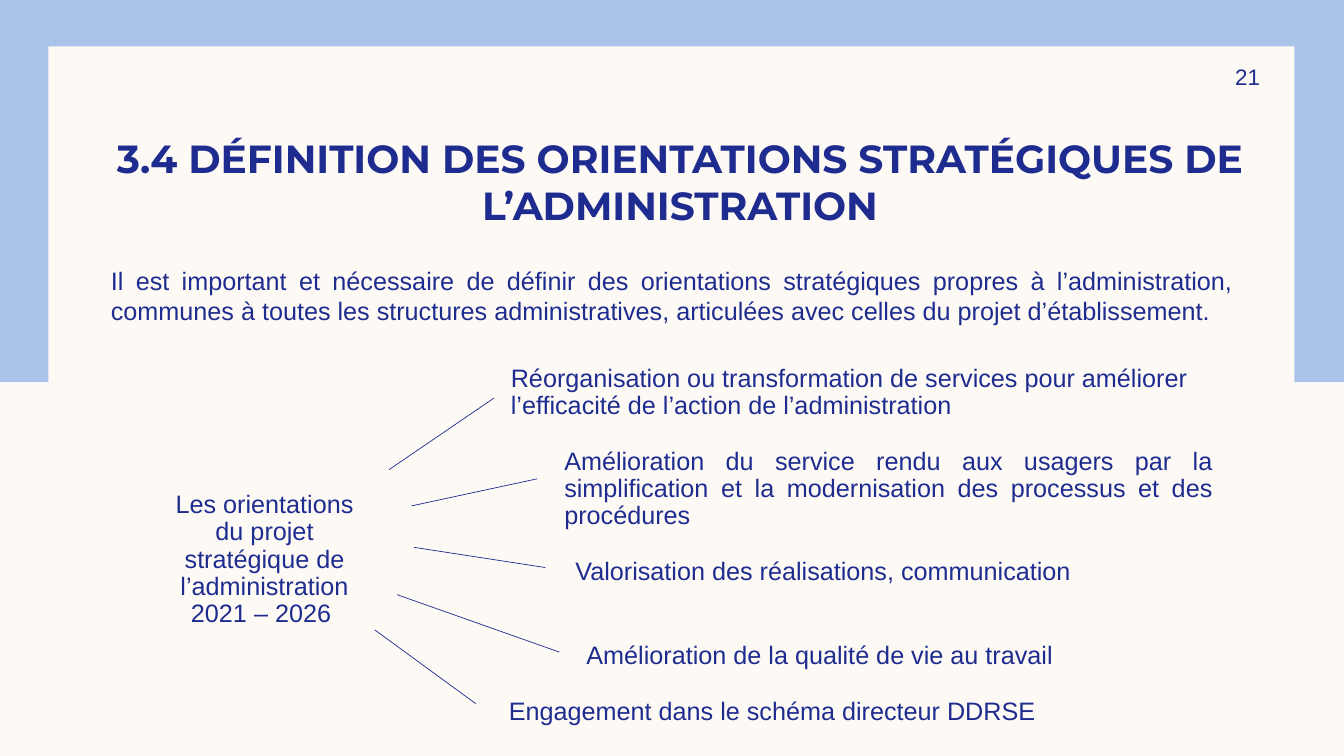
"""Build the slide on the strategic directions of the administration."""
import pptx
import pptx.util
import pptx.dml.color
import pptx.enum.shapes
import pptx.enum.text
import lxml.etree

Pt = pptx.util.Pt
Align = pptx.enum.text.PP_ALIGN
Anchor = pptx.enum.text.MSO_ANCHOR
Rgb = pptx.dml.color.RGBColor.from_string
Theme = {
    "ink": Rgb("1F2C8F"), "blue": Rgb("AAC3E8"), "cream": Rgb("FDFAF6"),
    "head": "Montserrat", "text": "Arial",
    "title": 28, "body": 18, "page": 16,
}

deck = pptx.Presentation()
deck.slide_width, deck.slide_height = Pt(960), Pt(540)
slide = deck.slides.add_slide(deck.slide_layouts[1])
shapes = slide.shapes
slide.background.fill.solid()
slide.background.fill.fore_color.rgb = Theme["cream"]


def write(text, box, holder=None, size="body", font="text", bold=False, align=Align.LEFT,
          anchor=Anchor.TOP, inset=(7.2, 3.6, 7.2, 3.6), line=1, before=0):
    """Put formatted text in a placeholder or a new text box."""
    item = holder or shapes.add_textbox(0, 0, 0, 0)
    item.left, item.top, item.width, item.height = map(Pt, box)
    frame = item.text_frame
    frame.word_wrap = True
    frame.auto_size = pptx.enum.text.MSO_AUTO_SIZE.NONE
    frame.vertical_anchor = anchor
    (frame.margin_left, frame.margin_top,
     frame.margin_right, frame.margin_bottom) = map(Pt, inset)
    frame.text = text
    para = frame.paragraphs[0]
    para.alignment, para.line_spacing, para.space_before = align, line, Pt(before)
    face = para.runs[0].font
    face.name, face.size, face.bold = Theme[font], Pt(Theme[size]), bold
    face.color.rgb = Theme["ink"]
    return para


for box, tone in [((0, 0, 960, 272.9), "blue"), ((34.6, 33.1, 890, 474.5), "cream")]:
    panel = shapes.add_shape(pptx.enum.shapes.MSO_SHAPE.RECTANGLE, *map(Pt, box))
    panel.shadow.inherit = False
    panel.fill.solid()
    panel.fill.fore_color.rgb = Theme[tone]
    panel.line.fill.background()
    shapes._spTree.remove(panel._element)
    shapes._spTree.insert(2 + (tone == "cream"), panel._element)

write("21", (815.8, 36, 84.2, 37.4), size="page", align=Align.RIGHT,
      anchor=Anchor.MIDDLE, inset=(7.2, 3.6, 0, 3.6))
write("3.4 DÉFINITION DES ORIENTATIONS STRATÉGIQUES DE L’ADMINISTRATION",
      (72, 83.5, 827.3, 79.9), holder=shapes.title, size="title", font="head",
      bold=True, align=Align.CENTER, anchor=Anchor.BOTTOM, inset=(7.2, 0, 7.2, 0))
intro = write(
    "Il est important et nécessaire de définir des orientations stratégiques propres à "
    "l’administration, communes à toutes les structures administratives, articulées avec "
    "celles du projet d’établissement.",
    (72, 182.2, 815.8, 346.3), holder=slide.placeholders[1],
    align=Align.JUSTIFY, inset=(7.2,) * 4, before=10)
props = intro._p.get_or_add_pPr()
props.set("marL", "0")
props.set("indent", "0")
lxml.etree.SubElement(props, pptx.oxml.ns.qn("a:buNone"))

write("Les orientations du projet stratégique de l’administration 2021 – 2026 ",
      (91.4, 309.6, 195.1, 180.7), align=Align.CENTER, anchor=Anchor.MIDDLE,
      inset=(29.5,) * 4, line=0.9)

goals = [
    ("Réorganisation ou transformation de services pour améliorer l’efficacité de "
     "l’action de l’administration",
     (357.8, 257.8, 498.2, 46.8), Align.LEFT, (277.9, 335.5, 352.8, 284.4)),
    ("Amélioration du service rendu aux usagers par la simplification et la "
     "modernisation des processus et des procédures",
     (396, 316.8, 477.4, 66.2), Align.JUSTIFY, (293.8, 361.4, 383.8, 342)),
    ("Valorisation des réalisations, communication",
     (403.9, 395.3, 380.2, 26.6), Align.LEFT, (295.9, 391, 389.5, 405.4)),
    ("Amélioration de la qualité de vie au travail",
     (411.8, 455.8, 363.6, 26.6), Align.LEFT, (283.7, 424.8, 399.6, 465.8)),
    ("Engagement dans le schéma directeur DDRSE",
     (356.4, 495.4, 442.1, 26.6), Align.LEFT, (267.8, 450, 339.8, 502.6)),
]
for text, box, align, ends in goals:
    write(text, box, align=align, line=0.9)
    ray = shapes.add_connector(pptx.enum.shapes.MSO_CONNECTOR.STRAIGHT, *map(Pt, ends))
    ray.line.color.rgb = Theme["ink"]
    ray.line.width = Pt(0.5)
    lxml.etree.SubElement(ray._element.spPr, pptx.oxml.ns.qn("a:effectLst"))

deck.save("out.pptx")
